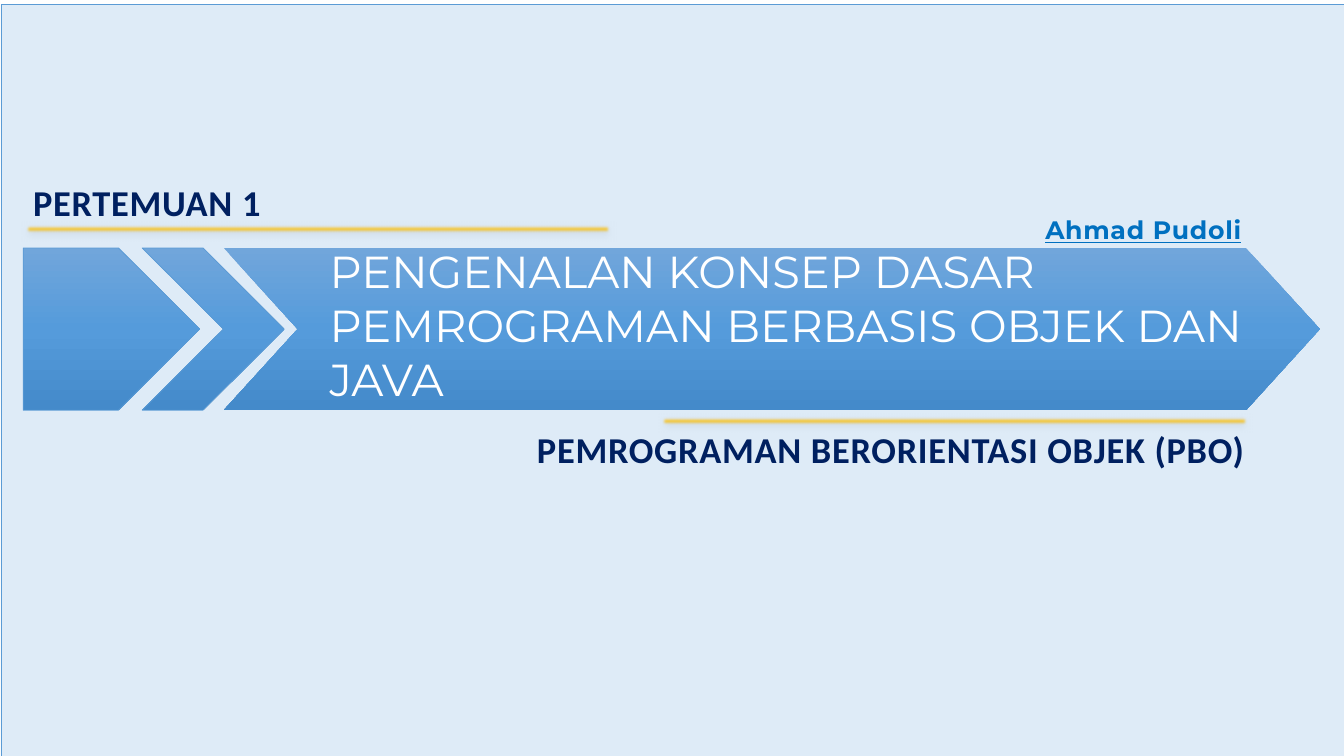
from copy import deepcopy
from lxml.etree import SubElement as Sub
from pptx import Presentation
from pptx.dml.color import RGBColor
from pptx.enum.shapes import MSO_SHAPE as Kind
from pptx.enum.text import MSO_ANCHOR as Anchor, PP_ALIGN as Align
from pptx.oxml.ns import qn
from pptx.util import Pt

PX = 9144  # 100 px to the inch
PALE = RGBColor(0xDE, 0xEB, 0xF7)
BLUE = RGBColor(0x5B, 0x9B, 0xD5)
NAVY = RGBColor(0x00, 0x20, 0x60)
LINK = RGBColor(0x00, 0x70, 0xC0)
WHITE = RGBColor(0xFF, 0xFF, 0xFF)
SKY = [RGBColor(0x71, 0xA6, 0xDB), RGBColor(0x55, 0x9B, 0xDB),
       RGBColor(0x44, 0x8A, 0xCA)]
GOLD = [RGBColor(0xFF, 0xC6, 0x4B), RGBColor(0xFF, 0xC0, 0x00),
        RGBColor(0xE3, 0xAB, 0x00)]

deck = Presentation()
deck.slide_width, deck.slide_height = 1333 * PX, 750 * PX
slide = deck.slides.add_slide(deck.slide_layouts[6])
shapes = slide.shapes


def add_block(kind, box, fill, edge=True):
    """Add a shape with a plain fill or a three-stop vertical gradient."""
    shape = shapes.add_shape(kind, *[n * PX for n in box])
    shape.shadow.inherit = False
    if isinstance(fill, list):
        shape.fill.gradient()
        shape.fill.gradient_angle = 270
        stops = shape._element.spPr.find(".//" + qn("a:gsLst"))
        stops.append(deepcopy(stops[-1]))
        for i, stop in enumerate(shape.fill.gradient_stops):
            stop.position = i / 2
            stop.color.rgb = fill[i]
    else:
        shape.fill.solid()
        shape.fill.fore_color.rgb = fill
    if edge:
        shape.line.color.rgb = BLUE
        shape.line.width = Pt(0.5)
    else:
        shape.line.fill.background()
    return shape


# Backdrop
add_block(Kind.RECTANGLE, (1, 4, 1333, 750), PALE)

# Arrow band
add_block(Kind.PENTAGON, (23, 246, 175, 161), SKY)
for left, width, bend, edge in [(141, 141, 0.572, True),
                                (222, 1087, 0.455, False)]:
    arrow = add_block(Kind.CHEVRON, (left, 246, width, 161), SKY, edge)
    arrow.adjustments[0] = bend

# Gold rules with a shadow and soft edges
for left, top in [(25, 223), (656, 413)]:
    rule = add_block(Kind.RECTANGLE, (left, top, 581, 9), GOLD, False)
    glow = rule._element.spPr.find(qn("a:effectLst"))
    shade = Sub(glow, qn("a:outerShdw"), blurRad=str(Pt(4.5)),
                dist=str(Pt(1.5)), dir="5400000", rotWithShape="0")
    tint = Sub(shade, qn("a:srgbClr"), val="000000")
    Sub(tint, qn("a:alpha"), val="63000")
    Sub(glow, qn("a:softEdge"), rad=str(Pt(2.5)))

# Texts: words, box, size, font, colour, alignment, bold, underline
texts = [
    ("PERTEMUAN 1", (23, 182, 467, 36),
     26, "Calibri", NAVY, Align.LEFT, True, False),
    ("PEMROGRAMAN BERORIENTASI OBJEK (PBO)", (199, 427, 1046, 36),
     26, "Calibri", NAVY, Align.RIGHT, True, False),
    ("PENGENALAN KONSEP DASAR PEMROGRAMAN BERBASIS OBJEK DAN JAVA",
     (317, 265, 943, 114),
     32, "Montserrat", WHITE, Align.LEFT, False, False),
    ("Ahmad Pudoli", (892, 210, 349, 36),
     18, "Montserrat", LINK, Align.RIGHT, True, True),
]
for words, box, size, face, hue, side, bold, under in texts:
    frame = shapes.add_textbox(*[n * PX for n in box]).text_frame
    frame.word_wrap = True
    frame.vertical_anchor = Anchor.MIDDLE
    frame.text = words
    para = frame.paragraphs[0]
    para.alignment = side
    run = para.runs[0]
    font = run.font
    font.size, font.name, font.color.rgb = Pt(size), face, hue
    font.bold, font.underline = bold, under
    if bold:
        run._r.get_or_add_rPr().set("spc", "50")

deck.save("out.pptx")
